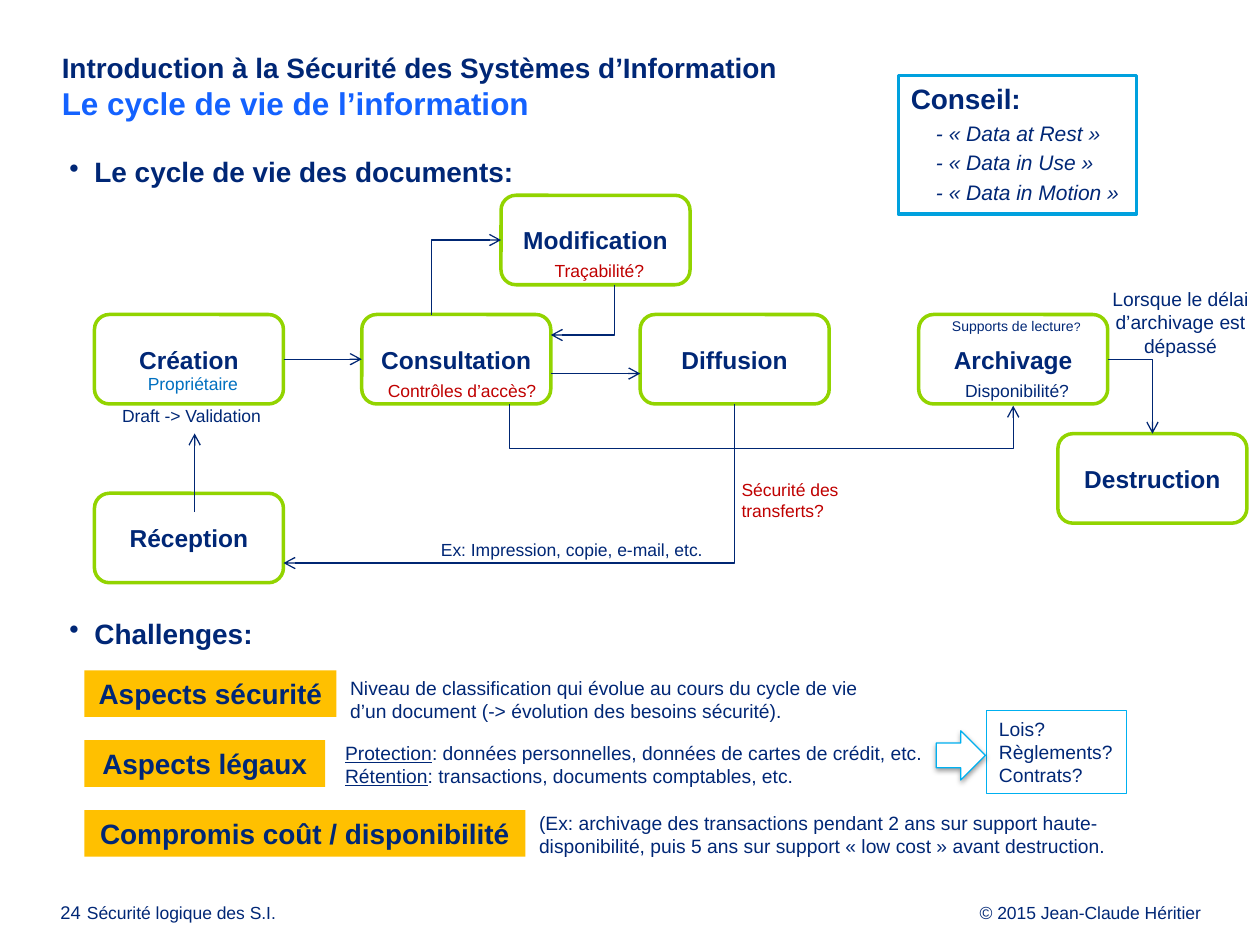
from pptx import Presentation
from pptx.dml.color import RGBColor
from pptx.enum.shapes import MSO_CONNECTOR as LINK, MSO_SHAPE as SHAPE
from pptx.enum.text import MSO_ANCHOR as ANCHOR, PP_ALIGN as ALIGN
from pptx.oxml import parse_xml
from pptx.oxml.ns import nsdecls
from pptx.util import Inches, Pt

NAVY, BLUE, RED, GREEN = "002776", "1462FF", "C00000", "92D400"
WIRE, CYAN, SKY, AMBER, WHITE = "002673", "00A1DE", "00B0F0", "FFC000", "FFFFFF"
WIDE, HIGH = 10, 7.5

# Diagram grid: stage name -> (column, row)
STAGES = {"Création": (0, 2), "Consultation": (1.92, 2), "Modification": (2.92, 0),
          "Diffusion": (3.92, 2), "Archivage": (5.92, 2),
          "Destruction": (6.92, 4), "Réception": (0, 5)}
COLUMN, ROW = 1.105, 0.473
STAGE_WIDE, STAGE_HIGH = 1.5, 0.71


def color(value):
    return RGBColor.from_string(value)


def write(shape, text, size, ink=NAVY, bold=False, italic=False, align=ALIGN.LEFT,
          anchor=ANCHOR.TOP, wrap=True, inset=None):
    frame = shape.text_frame
    frame.text = text
    frame.word_wrap = wrap
    frame.vertical_anchor = anchor
    if inset is not None:
        frame.margin_left = Inches(inset)
        frame.margin_top = frame.margin_right = frame.margin_bottom = 0
    for para in frame.paragraphs:
        para.alignment = align
        for span in para.runs:
            style(span, size, ink, bold, italic)
    return frame


def style(span, size, ink=NAVY, bold=False, italic=False):
    font = span.font
    font.name, font.size, font.bold, font.italic = "Arial", Pt(size), bold, italic
    font.color.rgb = color(ink)


def add_text(page, box, text, size, **options):
    shape = page.shapes.add_textbox(*map(Inches, box))
    return write(shape, text, size, **options)


def add_box(page, kind, box, fill=None, line=None, weight=2):
    shape = page.shapes.add_shape(kind, *map(Inches, box))
    shape.shadow.inherit = False
    if fill:
        shape.fill.solid()
        shape.fill.fore_color.rgb = color(fill)
    else:
        shape.fill.background()
    if line:
        shape.line.color.rgb = color(line)
        shape.line.width = Pt(weight)
    else:
        shape.line.fill.background()
    return shape


def finish_arrow(shape):
    shape.line.color.rgb = color(WIRE)
    shape.line.width = Pt(0.75)
    shape.line._get_or_add_ln().append(
        parse_xml(f'<a:tailEnd {nsdecls("a")} type="arrow"/>'))


def add_arrow(page, start, end):
    arrow = page.shapes.add_connector(LINK.STRAIGHT, *map(Inches, start + end))
    finish_arrow(arrow)
    arrow._element.spPr.append(parse_xml(f'<a:effectLst {nsdecls("a")}/>'))
    return arrow


def add_route(page, *points):
    first, *rest = [tuple(map(Inches, point)) for point in points]
    builder = page.shapes.build_freeform(*first)
    builder.add_line_segments(rest, close=False)
    route = builder.convert_to_shape()
    route.shadow.inherit = False
    route.fill.background()
    finish_arrow(route)


def add_bullet(page, box, text):
    para = add_text(page, box, text, 16, bold=True, inset=0.04).paragraphs[0]
    props = para._p.get_or_add_pPr()
    props.set("marL", str(Inches(0.2)))
    props.set("indent", str(-Inches(0.2)))
    props.append(parse_xml(f'<a:buChar {nsdecls("a")} char="•"/>'))


def add_heading(page, box):
    frame = add_text(page, box, "Introduction à la Sécurité des Systèmes d’Information\n"
                     "Le cycle de vie de l’information", 16, bold=True, inset=0.04)
    style(frame.paragraphs[1].runs[0], 18, BLUE, True)


def add_states(page, box):
    shape = add_box(page, SHAPE.RECTANGLE, box, WHITE, CYAN)
    frame = write(shape, "Conseil:\n- «\u00a0Data at Rest\u00a0»\n- «\u00a0Data in Use\u00a0»\n"
                  "- «\u00a0Data in Motion\u00a0»", 12, italic=True)
    for para in frame.paragraphs:
        para.space_after = Pt(2.7)
    style(frame.paragraphs[0].runs[0], 16, bold=True)
    for para in frame.paragraphs[1:]:
        para._p.get_or_add_pPr().set("marL", str(Inches(0.2)))


def add_lifecycle(page, left, top):
    def at(stage, across, down):
        """Point given as shares of a stage's width and height."""
        column, row = STAGES[stage]
        return (left + column * COLUMN + across * STAGE_WIDE,
                top + row * ROW + down * STAGE_HIGH)

    # Stages
    shapes = {}
    for stage in STAGES:
        box = at(stage, 0, 0) + (STAGE_WIDE, STAGE_HIGH)
        shapes[stage] = add_box(page, SHAPE.ROUNDED_RECTANGLE, box, WHITE, GREEN)
        write(shapes[stage], stage, 14, bold=True, align=ALIGN.CENTER, anchor=ANCHOR.MIDDLE)

    # Straight arrows
    link = add_arrow(page, at("Création", 1, 0.5), at("Consultation", 0, 0.5))
    link.begin_connect(shapes["Création"], 3)
    link.end_connect(shapes["Consultation"], 1)
    add_arrow(page, at("Consultation", 1, 0.66), at("Diffusion", 0, 0.66))
    add_arrow(page, at("Réception", 0.53, 0.21), at("Création", 0.53, 1.33))

    # Arrows with one corner: start, end, and whether they leave vertically
    for start, end, vertical in (
            (at("Consultation", 0.37, 0), at("Modification", 0, 0.5), True),
            (at("Modification", 0.6, 1), at("Consultation", 1, 0.23), True),
            (at("Archivage", 1, 0.5), at("Destruction", 0.5, 0), False),
            (at("Diffusion", 0.5, 1), at("Réception", 1, 0.78), True)):
        corner = (start[0], end[1]) if vertical else (end[0], start[1])
        add_route(page, start, corner, end)
    add_route(page, at("Consultation", 0.78, 1), at("Consultation", 0.78, 1.5),
              at("Archivage", 0.5, 1.5), at("Archivage", 0.5, 1.02))

    # Remarks: text, stage, offset and width as shares of the stage, size, ink, alignment
    middle, near = ALIGN.CENTER, ALIGN.LEFT
    for text, stage, across, down, width, size, ink, align in (
            ("Draft -> Validation", "Création", 0.08, 0.94, 0.95, 10, NAVY, near),
            ("Propriétaire", "Création", 0.05, 0.59, 0.94, 10, "0070C0", middle),
            ("Contrôles d’accès?", "Consultation", 0.06, 0.66, 0.94, 10, RED, middle),
            ("Traçabilité?", "Modification", 0.05, 0.66, 0.94, 10, RED, middle),
            ("Disponibilité?", "Archivage", 0.05, 0.66, 0.94, 10, NAVY, middle),
            ("Lorsque le délai d’archivage est dépassé", "Archivage",
             0.95, -0.37, 0.87, 11, NAVY, middle),
            ("Ex: Impression, copie, e-mail, etc.", "Réception",
             1.63, 0.44, 1.79, 10, NAVY, middle),
            ("Sécurité des transferts?", "Diffusion", 0.47, 1.77, 0.68, 10, RED, near)):
        box = at(stage, across, down) + (width * STAGE_WIDE, 0.27)
        add_text(page, box, text, size, ink=ink, align=align)
    media = add_text(page, at("Archivage", 0.11, -0.03) + (1.24, 0.24),
                     "Supports de lecture", 8, wrap=False)
    mark = media.paragraphs[0].add_run()
    mark.text = "?"
    style(mark, 7)


def add_challenges(page, left, top):
    pitch = 0.555
    note_left = left + 1.97
    # Tags with their notes
    for index, (tag, width, note, note_width, lift) in enumerate((
            ("Aspects sécurité", 2, "Niveau de classification qui évolue au cours du cycle "
             "de vie d’un document (-> évolution des besoins sécurité).", 4.41, 0),
            ("Aspects légaux", 1.91, "Protection\nRétention", 4.96, 0.04),
            ("Compromis coût / disponibilité", 3.5, "(Ex: archivage des transactions pendant "
             "2 ans sur support haute-disponibilité, puis 5 ans sur support "
             "«\u00a0low cost\u00a0» avant destruction.", 4.96, 0.04))):
        y = top + index * pitch
        shape = add_box(page, SHAPE.RECTANGLE, (left, y, width, 0.37), AMBER)
        write(shape, tag, 16, bold=True, align=ALIGN.CENTER, wrap=False)
        note_x = max(note_left, left + width + 0.01)
        frame = add_text(page, (note_x, y - lift, note_width, 0.47), note, 11)
        if index == 1:
            for para, detail in zip(frame.paragraphs, (
                    ": données personnelles, données de cartes de crédit, etc.",
                    ": transactions, documents comptables, etc.")):
                para.runs[0].font.underline = True
                span = para.add_run()
                span.text = detail
                style(span, 11)

    # Legal consequences
    rules = add_box(page, SHAPE.RECTANGLE, (left + 7.16, top + 0.32, 1.11, 0.66), None, SKY, 0.75)
    write(rules, "Lois?\nRèglements?\nContrats?", 11, wrap=False)
    arrow = add_box(page, SHAPE.RIGHT_ARROW, (left + 6.76, top + 0.48, 0.39, 0.39),
                    WHITE, SKY, 0.75)
    properties = arrow._element.spPr
    properties.remove(properties.find("{*}effectLst"))
    properties.append(parse_xml(
        f'<a:effectLst {nsdecls("a")}><a:outerShdw blurRad="{Pt(3.1)}" dist="{Pt(1.6)}" '
        'dir="5400000" rotWithShape="0"><a:srgbClr val="000000"><a:alpha val="38000"/>'
        '</a:srgbClr></a:outerShdw></a:effectLst>'))


def add_footer(page, top):
    for x, width, text, size, align in (
            (0.48, 0.26, "24", 10.5, ALIGN.LEFT),
            (0.69, 2.53, "Sécurité logique des S.I.", 10, ALIGN.LEFT),
            (7, 2.53, "© 2015 Jean-Claude Héritier", 10, ALIGN.RIGHT)):
        frame = add_text(page, (x, top, width, 0.16), text, size, align=align, inset=0)
        frame.paragraphs[0].line_spacing = Pt(10.8)


def main():
    deck = Presentation()
    deck.slide_width, deck.slide_height = Inches(WIDE), Inches(HIGH)
    page = deck.slides.add_slide(deck.slide_layouts[6])
    add_heading(page, (0.45, 0.4, 9.21, 0.69))
    add_bullet(page, (0.51, 1.23, 5, 0.3), "Le cycle de vie des documents:")
    add_bullet(page, (0.51, 4.89, 5, 0.3), "Challenges:")
    add_lifecycle(page, 0.75, 1.55)
    add_states(page, (7.13, 0.6, 1.89, 1.1))
    add_challenges(page, 0.67, 5.32)
    add_footer(page, 7.18)
    deck.save("out.pptx")


if __name__ == "__main__":
    main()
